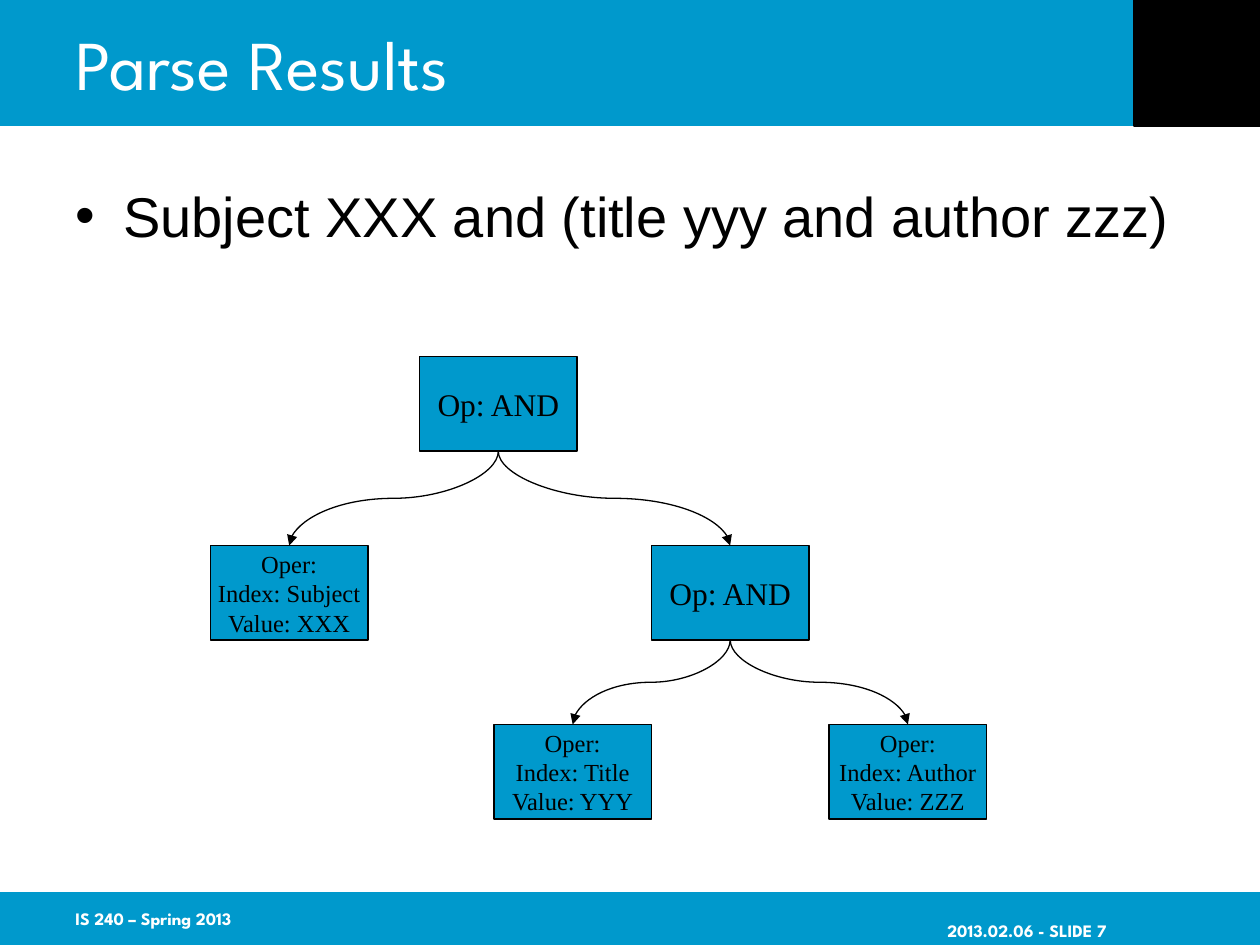
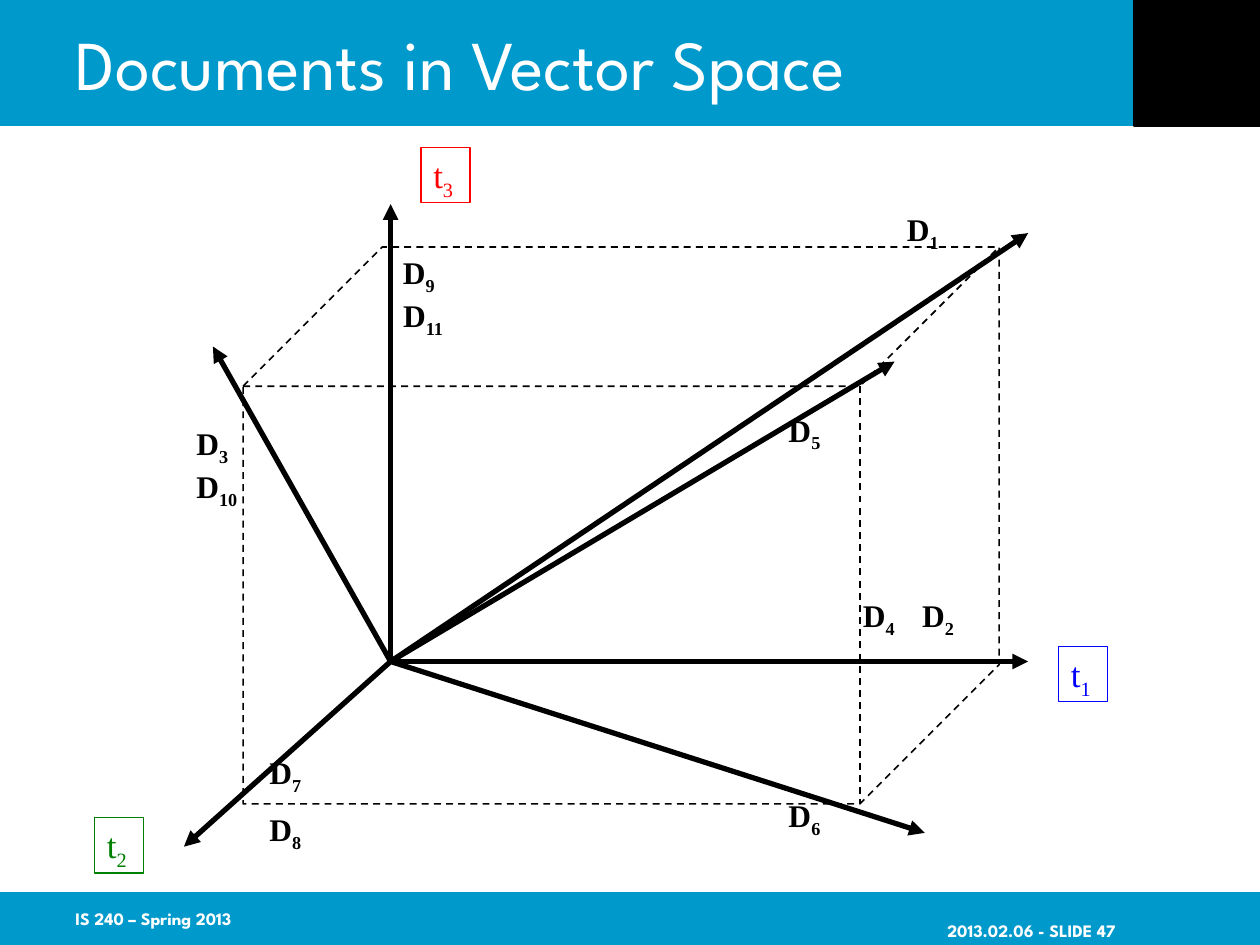
from dataclasses import dataclass

from lxml.etree import SubElement
from pptx import Presentation
from pptx.dml.color import RGBColor
from pptx.enum.dml import MSO_LINE
from pptx.enum.shapes import MSO_CONNECTOR, MSO_SHAPE
from pptx.enum.text import MSO_ANCHOR, MSO_AUTO_SIZE, PP_ALIGN
from pptx.oxml.ns import qn
from pptx.util import Inches, Pt

# Content
COURSE = "IS 240 – Spring 2013"
LECTURE_DATE = "2013.02.06"

PARSE_TITLE, PARSE_NUMBER = "Parse Results", 7
QUERY = "Subject XXX and (title yyy and author zzz)"
NODE_WIDTH, NODE_HEIGHT = 1.25, 0.75
OPERATOR = ["Op: AND"]
# Tree node: left, top, text lines
TREE_NODES = {
    "root": (3.33, 2.83, OPERATOR),
    "group": (5.17, 4.33, OPERATOR),
    "subject": (1.67, 4.33, ["Oper:", "Index: Subject", "Value: XXX"]),
    "title": (3.92, 5.75, ["Oper:", "Index: Title", "Value: YYY"]),
    "author": (6.58, 5.75, ["Oper:", "Index: Author", "Value: ZZZ"]),
}
TREE_BRANCHES = [("root", "subject"), ("root", "group"),
                 ("group", "title"), ("group", "author")]

VECTOR_TITLE, VECTOR_NUMBER = "Documents in Vector Space", 47
CUBE = (1.93, 1.96, 6, 4.42)
ORIGIN = (3.1, 5.25)
VECTOR_TIPS = [(1.46, 6.72), (8.16, 5.25), (3.1, 1.62), (8.16, 1.85),
               (1.69, 2.75), (7.34, 6.61), (7.1, 2.87)]
# Term: subscript, left, top, colour name
TERMS = [("1", 8.4, 5.13, "blue"), ("2", 0.75, 6.49, "green"),
         ("3", 3.34, 1.17, "red")]
# Document: subscript, left, top
DOCUMENTS = [
    ("1", 7.1, 1.62), ("2", 7.22, 4.68), ("10", 1.46, 3.66), ("3", 1.46, 3.32),
    ("9", 3.1, 1.96), ("4", 6.75, 4.68), ("7", 2.04, 5.93), ("8", 2.04, 6.38),
    ("5", 6.16, 3.21), ("11", 3.1, 2.3), ("6", 6.16, 6.27),
]


@dataclass(frozen=True)
class Theme:
    band: RGBColor = RGBColor(0x00, 0x99, 0xCC)
    black: RGBColor = RGBColor(0, 0, 0)
    white: RGBColor = RGBColor(255, 255, 255)
    blue: RGBColor = RGBColor(0, 0, 255)
    green: RGBColor = RGBColor(0, 128, 0)
    red: RGBColor = RGBColor(255, 0, 0)
    display: str = "League Spartan"
    body: str = "Arial"
    diagram: str = "Times New Roman"
    title_size: int = 40
    bullet_size: int = 32
    term_size: int = 20
    label_size: int = 18
    detail_size: int = 14
    footer_size: int = 10
    thin: float = 0.75
    dashed: float = 1
    thick: float = 3


THEME = Theme()


# Formatting helpers
def apply_format(target, values):
    for name, value in values.items():
        setattr(target, name, value)


def format_font(font, name, size, color, bold=False):
    apply_format(font, {"name": name, "size": Pt(size), "bold": bold})
    font.color.rgb = color


def format_line(line, width, color=THEME.black):
    line.color.rgb = color
    line.width = Pt(width)


def add_box(slide, preset, area, fill=None, line=None, width=THEME.thin):
    shape = slide.shapes.add_shape(preset, *map(Inches, area))
    shape.shadow.inherit = False
    if fill is None:
        shape.fill.background()
    else:
        shape.fill.solid()
        shape.fill.fore_color.rgb = fill
    if line is None:
        shape.line.fill.background()
    else:
        format_line(shape.line, width, line)
    return shape


def finish_arrow(connector, width):
    format_line(connector.line, width)
    line_xml = connector.line._get_or_add_ln()
    SubElement(line_xml, qn("a:tailEnd"), type="triangle")
    SubElement(connector.element.spPr, qn("a:effectLst"))


# Shared slide frame
def add_footer(slide, text, left, top_inset):
    box = slide.shapes.add_textbox(*map(Inches, (left, 7.08, 2.08, 0.42)))
    frame = box.text_frame
    apply_format(frame, {
        "text": text, "word_wrap": True, "vertical_anchor": MSO_ANCHOR.MIDDLE,
        "margin_right": 0, "margin_top": Inches(top_inset),
    })
    format_font(frame.paragraphs[0].font, THEME.display, THEME.footer_size,
                THEME.white, bold=True)


def add_framed_slide(presentation, title_text, number):
    slide = presentation.slides.add_slide(presentation.slide_layouts[5])
    rectangle = MSO_SHAPE.RECTANGLE
    add_box(slide, rectangle, (0, 0, 10, 1), THEME.band)
    add_box(slide, rectangle, (0, 7.08, 10, 0.42), THEME.band)
    add_box(slide, rectangle, (9, 0, 1, 1), THEME.black, THEME.black)
    add_footer(slide, f"{LECTURE_DATE} - SLIDE {number}", 7.42, 0.24)
    add_footer(slide, COURSE, 0.5, 0.05)

    title = slide.shapes.title
    apply_format(title, {"left": Inches(0.5), "top": 0,
                         "width": Inches(8.5), "height": Inches(1)})
    apply_format(title.text_frame, {
        "text": title_text, "vertical_anchor": MSO_ANCHOR.MIDDLE,
        "auto_size": MSO_AUTO_SIZE.NONE, "word_wrap": True,
    })
    paragraph = title.text_frame.paragraphs[0]
    paragraph.alignment = PP_ALIGN.LEFT
    format_font(paragraph.font, THEME.display, THEME.title_size, THEME.white)
    # Bring the title in front of its band
    title.element.getparent().append(title.element)
    return slide


# Parse tree parts
def add_query(slide):
    box = slide.shapes.add_textbox(*map(Inches, (0.5, 1.39, 9, 5.36)))
    apply_format(box.text_frame, {"text": QUERY, "word_wrap": True,
                                  "margin_bottom": 0})
    paragraph = box.text_frame.paragraphs[0]
    properties = paragraph._p.get_or_add_pPr()
    properties.set("marL", str(Inches(0.38)))
    properties.set("indent", str(-Inches(0.38)))
    SubElement(properties, qn("a:buFont"), typeface=THEME.body)
    SubElement(properties, qn("a:buChar"), char="•")
    format_font(paragraph.font, THEME.body, THEME.bullet_size, THEME.black)


def add_node(slide, left, top, lines):
    node = add_box(slide, MSO_SHAPE.RECTANGLE,
                   (left, top, NODE_WIDTH, NODE_HEIGHT), THEME.band, THEME.black)
    apply_format(node.text_frame, {
        "text": "\n".join(lines), "word_wrap": False,
        "vertical_anchor": MSO_ANCHOR.MIDDLE,
    })
    size = THEME.label_size if len(lines) == 1 else THEME.detail_size
    for paragraph in node.text_frame.paragraphs:
        paragraph.alignment = PP_ALIGN.CENTER
        format_font(paragraph.font, THEME.diagram, size, THEME.black)
    return node


def add_branch(slide, parent, child):
    start_x, start_y = parent.left + parent.width // 2, parent.top + parent.height
    end_x, end_y = child.left + child.width // 2, child.top
    connector = slide.shapes.add_connector(MSO_CONNECTOR.CURVE,
                                           start_x, start_y, end_x, end_y)
    connector.begin_connect(parent, 2)
    connector.end_connect(child, 0)
    # A quarter turn makes the curve leave and arrive vertically
    center_x, center_y = (start_x + end_x) // 2, (start_y + end_y) // 2
    goes_left = end_x < start_x
    half_run = (end_y - start_y) // 2 * (1 if goes_left else -1)
    half_rise = abs(end_x - start_x) // 2
    apply_format(connector, {
        "begin_x": center_x - half_run, "begin_y": center_y - half_rise,
        "end_x": center_x + half_run, "end_y": center_y + half_rise,
        "rotation": 90 if goes_left else 270,
    })
    finish_arrow(connector, THEME.thin)


def build_parse_slide(presentation):
    slide = add_framed_slide(presentation, PARSE_TITLE, PARSE_NUMBER)
    add_query(slide)
    nodes = {name: add_node(slide, *node) for name, node in TREE_NODES.items()}
    for parent, child in TREE_BRANCHES:
        add_branch(slide, nodes[parent], nodes[child])


# Vector space parts
def write_subscripted(shape, letter, subscript, size, color, bold=False):
    frame = shape.text_frame
    apply_format(frame, {"word_wrap": False, "vertical_anchor": MSO_ANCHOR.TOP,
                         "auto_size": MSO_AUTO_SIZE.SHAPE_TO_FIT_TEXT})
    paragraph = frame.paragraphs[0]
    paragraph.alignment = PP_ALIGN.LEFT
    for text in (letter, subscript):
        run = paragraph.add_run()
        run.text = text
        format_font(run.font, THEME.diagram, size, color, bold)
    run.font._element.set("baseline", "-25000")


def build_vector_slide(presentation):
    slide = add_framed_slide(presentation, VECTOR_TITLE, VECTOR_NUMBER)
    cube = add_box(slide, MSO_SHAPE.CUBE, CUBE, line=THEME.black,
                   width=THEME.dashed)
    cube.line.dash_style = MSO_LINE.DASH
    for tip in VECTOR_TIPS:
        vector = slide.shapes.add_connector(MSO_CONNECTOR.STRAIGHT,
                                            *map(Inches, ORIGIN + tip))
        finish_arrow(vector, THEME.thick)
    for subscript, left, top, color_name in TERMS:
        color = getattr(THEME, color_name)
        term = add_box(slide, MSO_SHAPE.RECTANGLE, (left, top, 0.39, 0.44),
                       line=color)
        write_subscripted(term, "t", subscript, THEME.term_size, color)
    for subscript, left, top in DOCUMENTS:
        width = 0.39 + 0.08 * len(subscript)
        label = slide.shapes.add_textbox(*map(Inches, (left, top, width, 0.4)))
        write_subscripted(label, "D", subscript, THEME.label_size, THEME.black,
                          bold=True)


def main():
    presentation = Presentation()
    presentation.slide_width = Inches(10)
    presentation.slide_height = Inches(7.5)
    build_parse_slide(presentation)
    build_vector_slide(presentation)
    presentation.save("out.pptx")


if __name__ == "__main__":
    main()
